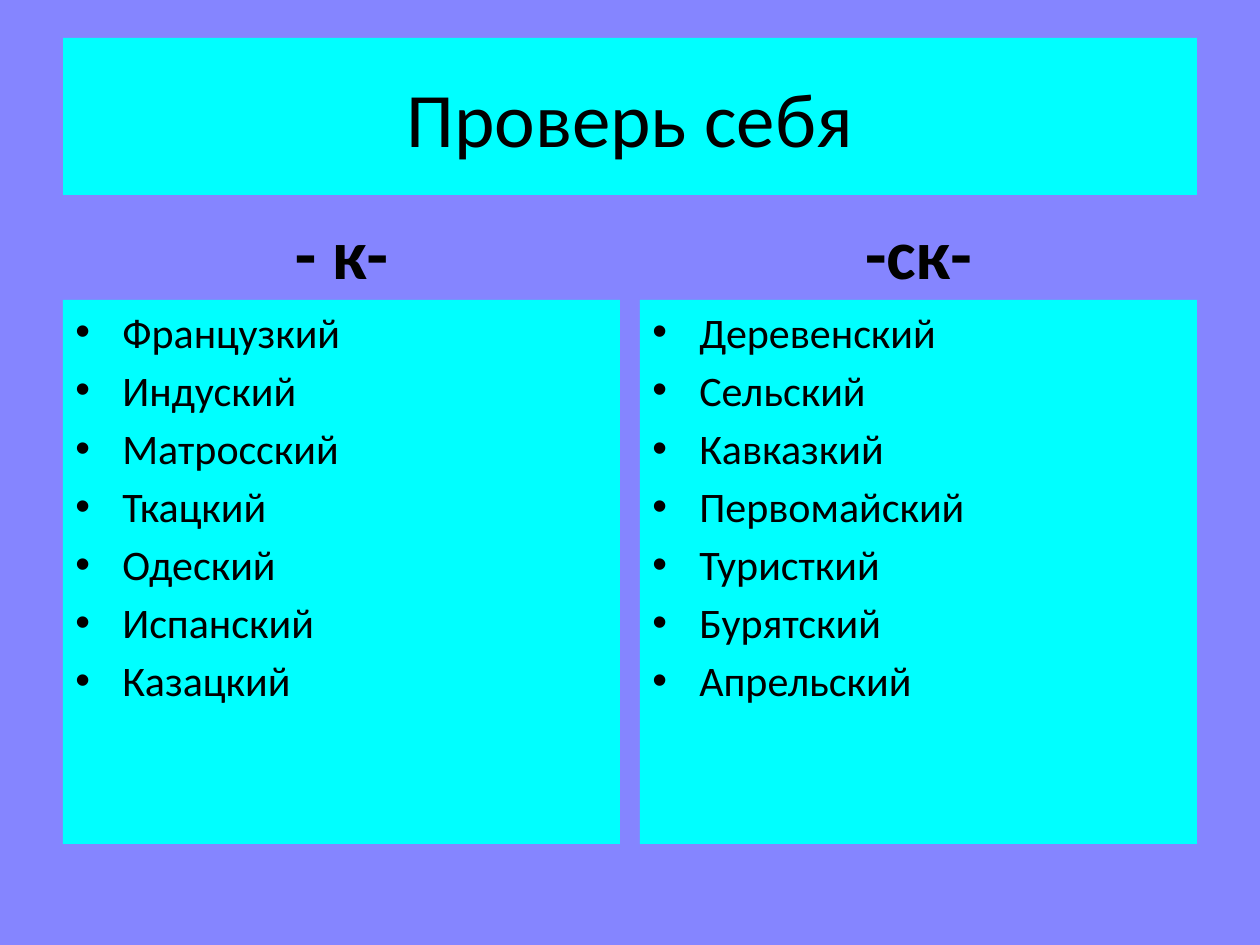
from dataclasses import dataclass

from lxml import etree
from pptx import Presentation
from pptx.dml.color import RGBColor
from pptx.enum.text import MSO_ANCHOR, MSO_AUTO_SIZE, PP_ALIGN
from pptx.oxml.ns import qn
from pptx.slide import Slide
from pptx.text.text import TextFrame
from pptx.util import Emu, Pt

CENTER, LEFT = PP_ALIGN.CENTER, PP_ALIGN.LEFT
TOP, MIDDLE, BOTTOM = MSO_ANCHOR.TOP, MSO_ANCHOR.MIDDLE, MSO_ANCHOR.BOTTOM
NO_AUTOFIT = MSO_AUTO_SIZE.NONE
TITLE_ONLY = 5
EMU_PER_PX = 914400 / 126

SLIDE_WIDTH, SLIDE_HEIGHT = 1260, 945
MARGIN = 63
TITLE_TOP, TITLE_HEIGHT = 38, 157
HEADING_TOP, HEADING_HEIGHT = 212, 88
LIST_HEIGHT = 544
COLUMN_WIDTH, COLUMN_GAP = 557, 20
BULLET_INDENT = 47


@dataclass(frozen=True)
class Theme:
    font: str = "Calibri"
    background: RGBColor = RGBColor(0x85, 0x85, 0xFF)
    panel: RGBColor = RGBColor(0x00, 0xFF, 0xFF)
    text: RGBColor = RGBColor(0x00, 0x00, 0x00)
    title_size: int = 44
    heading_size: int = 40
    word_size: int = 24
    word_gap: float = 4.4


@dataclass(frozen=True)
class Column:
    suffix: str
    words: tuple[str, ...]


THEME = Theme()
TITLE = "Проверь себя"
COLUMNS = (
    Column("- к-", ("Французкий", "Индуский", "Матросский", "Ткацкий",
                    "Одеский", "Испанский", "Казацкий")),
    Column("-ск-", ("Деревенский", "Сельский", "Кавказкий", "Первомайский",
                    "Туристкий", "Бурятский", "Апрельский")),
)


def px(length: int) -> Emu:
    return Emu(round(length * EMU_PER_PX))


def write_lines(frame: TextFrame, lines: tuple[str, ...], size: int,
                align: PP_ALIGN, anchor: MSO_ANCHOR, bold: bool = False) -> None:
    frame.word_wrap = True
    frame.auto_size = NO_AUTOFIT
    frame.vertical_anchor = anchor
    frame.text = "\n".join(lines)
    for paragraph in frame.paragraphs:
        paragraph.alignment = align
        paragraph.font.name = THEME.font
        paragraph.font.size = Pt(size)
        paragraph.font.bold = bold
        paragraph.font.color.rgb = THEME.text


def add_bullets(frame: TextFrame) -> None:
    for paragraph in frame.paragraphs:
        paragraph.space_before = Pt(THEME.word_gap)
        properties = paragraph._p.get_or_add_pPr()
        properties.set("marL", str(px(BULLET_INDENT)))
        properties.set("indent", str(-px(BULLET_INDENT)))
        bullet_font = etree.Element(qn("a:buFont"), typeface="Arial")
        bullet = etree.Element(qn("a:buChar"), char="•")
        properties.insert_element_before(bullet_font, "a:tabLst", "a:defRPr", "a:extLst")
        properties.insert_element_before(bullet, "a:tabLst", "a:defRPr", "a:extLst")


def draw_title(slide: Slide) -> None:
    title = slide.shapes.title
    title.left, title.top = px(MARGIN), px(TITLE_TOP)
    title.width, title.height = px(SLIDE_WIDTH - 2 * MARGIN), px(TITLE_HEIGHT)
    title.fill.solid()
    title.fill.fore_color.rgb = THEME.panel
    write_lines(title.text_frame, (TITLE,), THEME.title_size, CENTER, MIDDLE)


def draw_column(slide: Slide, column: Column, left: int) -> None:
    heading = slide.shapes.add_textbox(
        px(left), px(HEADING_TOP), px(COLUMN_WIDTH), px(HEADING_HEIGHT))
    write_lines(heading.text_frame, (column.suffix,), THEME.heading_size,
                CENTER, BOTTOM, bold=True)

    word_list = slide.shapes.add_textbox(
        px(left), px(HEADING_TOP + HEADING_HEIGHT), px(COLUMN_WIDTH), px(LIST_HEIGHT))
    word_list.fill.solid()
    word_list.fill.fore_color.rgb = THEME.panel
    write_lines(word_list.text_frame, column.words, THEME.word_size, LEFT, TOP)
    add_bullets(word_list.text_frame)


def main() -> None:
    presentation = Presentation()
    presentation.slide_width = px(SLIDE_WIDTH)
    presentation.slide_height = px(SLIDE_HEIGHT)
    slide = presentation.slides.add_slide(presentation.slide_layouts[TITLE_ONLY])
    slide.background.fill.solid()
    slide.background.fill.fore_color.rgb = THEME.background

    draw_title(slide)
    for index, column in enumerate(COLUMNS):
        draw_column(slide, column, MARGIN + index * (COLUMN_WIDTH + COLUMN_GAP))
    presentation.save("out.pptx")


if __name__ == "__main__":
    main()
